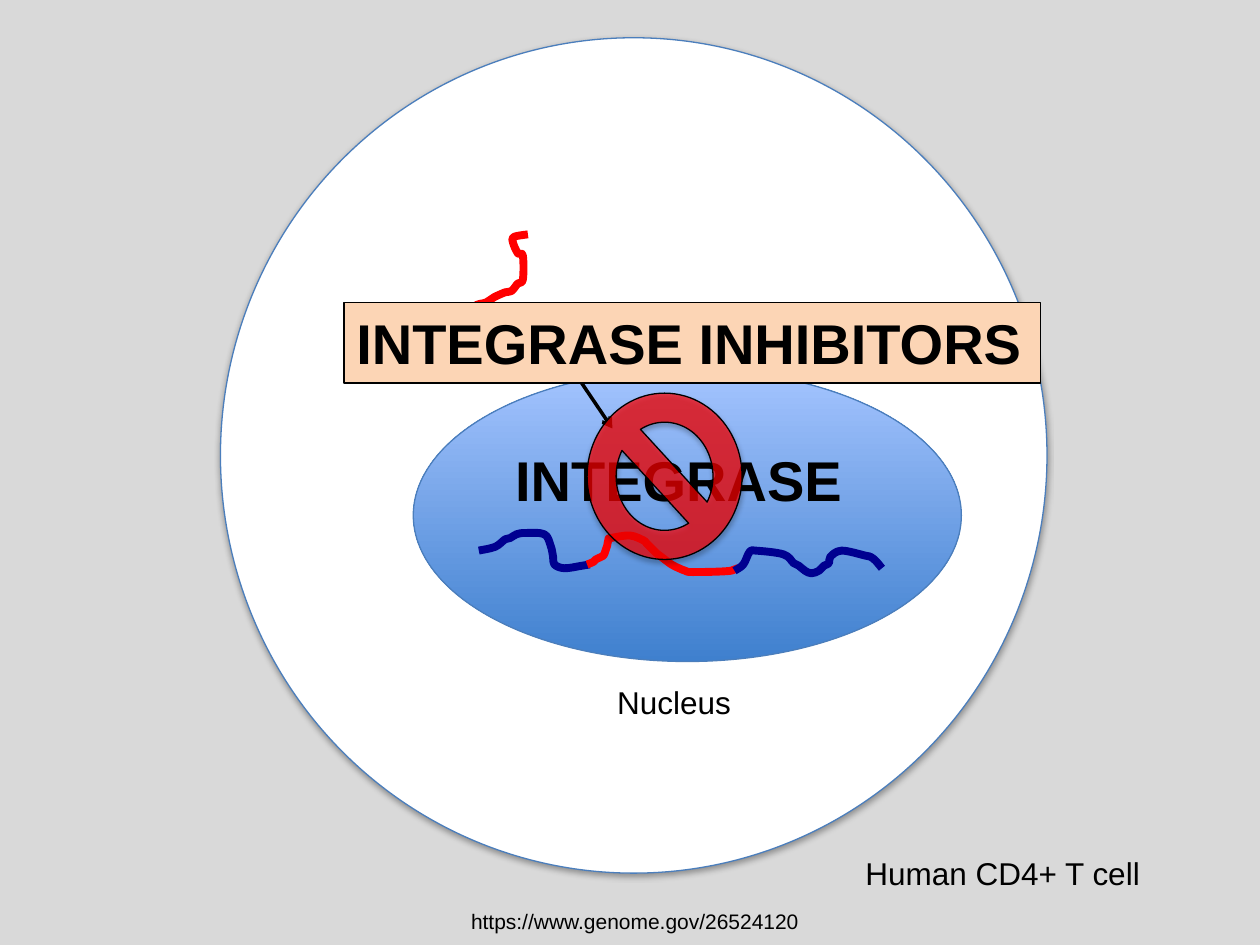
from lxml.etree import SubElement
from pptx import Presentation
from pptx.dml.color import RGBColor
from pptx.enum.shapes import MSO_CONNECTOR as CONN, MSO_SHAPE as SHAPE
from pptx.enum.text import MSO_AUTO_SIZE as AUTO, MSO_ANCHOR as ANCHOR, PP_ALIGN as ALIGN
from pptx.oxml.ns import qn
from pptx.util import Inches, Pt

W, H = 10, 7.5
BLUE, RED, EDGE, BLACK = "000090", "FF0000", "4B7EBC", "000000"

# Strands: colour and the points the curve runs through
VIRAL_DNA = (RED, [
    (4.19, 1.86), (4.08, 1.88), (4.07, 1.92), (4.11, 2.01), (4.15, 2.03), (4.15, 2.22),
    (4.11, 2.25), (4.06, 2.31), (4.01, 2.32), (3.92, 2.36), (3.86, 2.4), (3.76, 2.44),
    (3.72, 2.61), (3.64, 2.68), (3.61, 2.68)])
HOST_LEFT = (BLUE, [
    (3.8, 4.37), (3.93, 4.34), (4.01, 4.28), (4.05, 4.27), (4.1, 4.24), (4.17, 4.23),
    (4.32, 4.24), (4.37, 4.33), (4.39, 4.42), (4.4, 4.48), (4.48, 4.51), (4.62, 4.49),
    (4.68, 4.48)])
INSERTED = (RED, [
    (4.66, 4.48), (4.71, 4.46), (4.73, 4.44), (4.79, 4.41), (4.8, 4.39), (4.81, 4.36),
    (4.82, 4.33), (4.83, 4.28), (4.85, 4.27), (5, 4.25), (5.11, 4.29), (5.13, 4.31),
    (5.18, 4.36), (5.21, 4.39), (5.25, 4.42), (5.33, 4.48), (5.39, 4.51), (5.44, 4.53),
    (5.5, 4.54), (5.8, 4.53), (5.82, 4.49)])
HOST_RIGHT = (BLUE, [
    (5.83, 4.53), (5.9, 4.48), (5.95, 4.38), (6, 4.37), (6.22, 4.4), (6.3, 4.47),
    (6.34, 4.49), (6.39, 4.53), (6.44, 4.55), (6.5, 4.53), (6.54, 4.49), (6.58, 4.47),
    (6.59, 4.42), (6.68, 4.37), (6.87, 4.41), (6.91, 4.42), (6.95, 4.45), (7, 4.51)])

prs = Presentation()
prs.slide_width, prs.slide_height = Inches(W), Inches(H)
slide = prs.slides.add_slide(prs.slide_layouts[6])
shapes = slide.shapes


def rgb(color):
    return RGBColor.from_string(color)


def paint(fill, color):
    fill.solid()
    fill.fore_color.rgb = rgb(color)


def outline(sp, color, width=0.75):
    sp.line.color.rgb = rgb(color)
    sp.line.width = Pt(width)


def add_shape(kind, box, fill=None, line=BLACK, shadow=False):
    sp = shapes.add_shape(kind, *map(Inches, box))
    sp.shadow.inherit = False
    outline(sp, line)
    if fill:
        paint(sp.fill, fill)
    if shadow:
        effects = sp._element.spPr.find(qn("a:effectLst"))
        outer = SubElement(effects, qn("a:outerShdw"), blurRad=str(Pt(3.1)), dist=str(Pt(1.8)),
                           dir="5400000", rotWithShape="0")
        color = SubElement(outer, qn("a:srgbClr"), val=BLACK)
        SubElement(color, qn("a:alpha"), val="35000")
    return sp


def write(sp, text, size=18, bold=False):
    tf = sp.text_frame
    tf.word_wrap = False
    tf.auto_size = AUTO.SHAPE_TO_FIT_TEXT
    tf.vertical_anchor = ANCHOR.TOP
    p = tf.paragraphs[0]
    p.alignment = ALIGN.LEFT
    r = p.add_run()
    r.text = text
    r.font.name, r.font.size, r.font.bold = "Arial", Pt(size), bold
    r.font.color.rgb = rgb(BLACK)


def add_label(text, box, **fmt):
    write(shapes.add_textbox(*map(Inches, box)), text, **fmt)


def add_strand(color, points):
    knots = [(Inches(x), Inches(y)) for x, y in points]
    builder = shapes.build_freeform(*knots[0])
    builder.add_line_segments(knots[1:], close=False)
    sp = builder.convert_to_shape()
    sp.shadow.inherit = False
    sp.fill.background()
    outline(sp, color, 4.5)

    # Bend each segment into a Bezier curve with Catmull-Rom handles
    local = [(x - sp.left, y - sp.top) for x, y in knots]
    padded = [local[0], *local, local[-1]]
    segments = list(sp._element.iter(qn("a:lnTo")))
    for seg, a, b, c, d in zip(segments, padded, padded[1:], padded[2:], padded[3:]):
        seg.tag = qn("a:cubicBezTo")
        seg.remove(seg[0])
        handles = ([q + (r - p) / 6 for p, q, r in zip(a, b, c)],
                   [q - (r - p) / 6 for p, q, r in zip(b, c, d)])
        for x, y in (*handles, c):
            SubElement(seg, qn("a:pt"), x=str(round(x)), y=str(round(y)))


# Background, cell and nucleus
paint(slide.background.fill, "D9D9D9")
add_shape(SHAPE.OVAL, (1.75, 0.3, 6.56, 6.63), "FFFFFF", EDGE, shadow=True)
nucleus = add_shape(SHAPE.OVAL, (3.28, 2.93, 4.35, 2.32), line=EDGE)
nucleus.fill.gradient()
nucleus.fill.gradient_angle = 90
for stop, color in zip(nucleus.fill.gradient_stops, ("3F80CE", "A4C4FF")):
    stop.color.rgb = rgb(color)

# Strands and cell labels
add_strand(*HOST_LEFT)
add_label("Human CD4+ T cell", (6.77, 6.73, 2.4, 0.4))
add_label("Nucleus", (4.8, 5.37, 1.11, 0.4))
add_strand(*VIRAL_DNA)

# Arrow from viral DNA into the nucleus
arrow = shapes.add_connector(CONN.STRAIGHT, *map(Inches, (4.19, 2.41, 4.86, 3.4)))
outline(arrow, BLACK, 2)
SubElement(arrow.line._get_or_add_ln(), qn("a:tailEnd"), type="arrow")
SubElement(arrow._element.spPr, qn("a:effectLst"))

add_strand(*INSERTED)
add_strand(*HOST_RIGHT)
add_label("https://www.genome.gov/26524120", (3.64, 7.16, 2.83, 0.3), size=12)

# Enzyme, its block and the drug class
add_label("INTEGRASE", (3.99, 3.49, 2.82, 0.64), size=32, bold=True)
block = add_shape(SHAPE.NO_SYMBOL, (4.66, 3.12, 1.23, 1.32), RED, shadow=True)
red = block._element.spPr.find(qn("a:solidFill")).find(qn("a:srgbClr"))
SubElement(red, qn("a:alpha"), val="70000")
banner = add_shape(SHAPE.RECTANGLE, (2.73, 2.4, 5.53, 0.64), "FCD5B5")
write(banner, "INTEGRASE INHIBITORS", size=32, bold=True)

prs.save("out.pptx")
